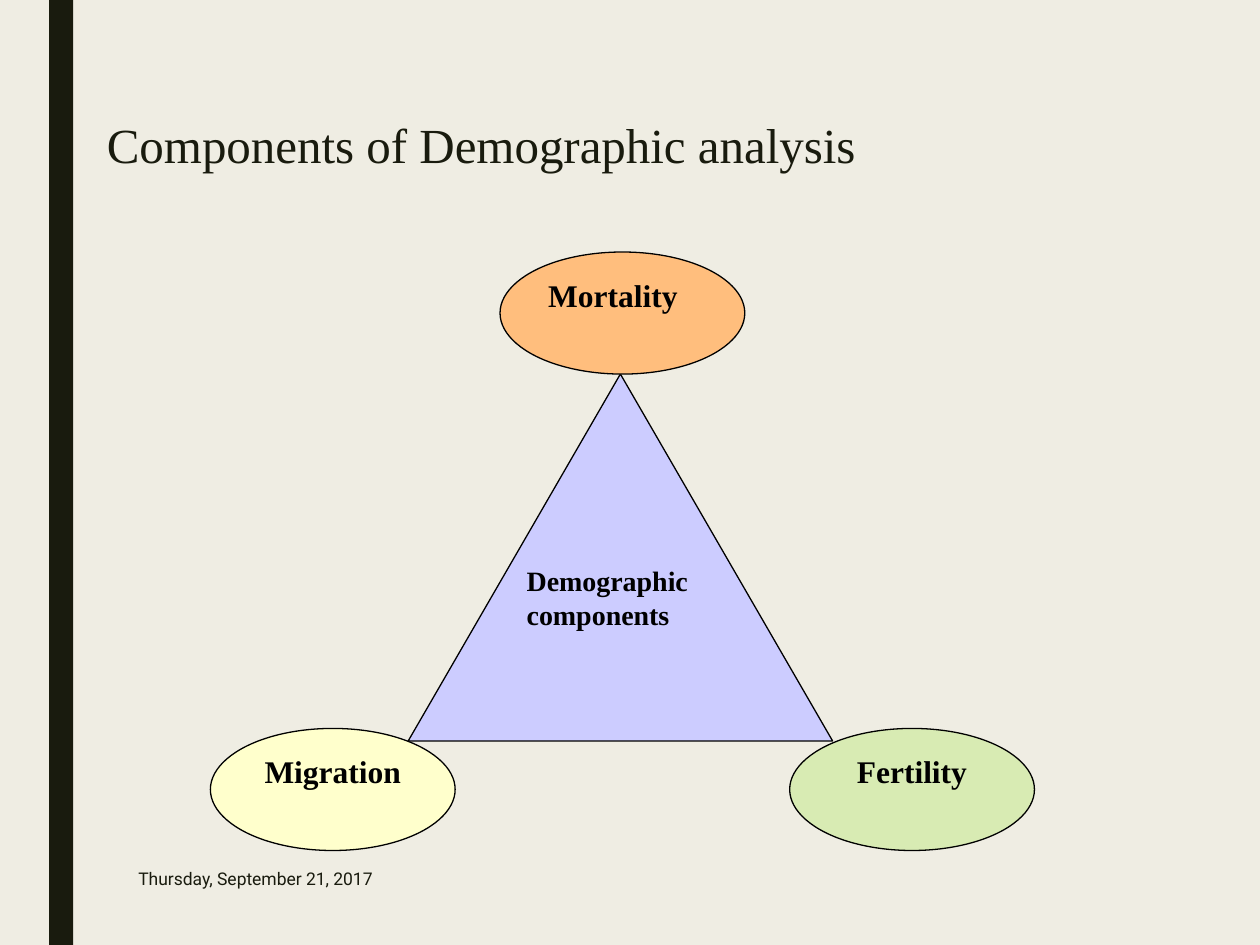
from pptx import Presentation
from pptx.dml.color import RGBColor
from pptx.enum.shapes import MSO_SHAPE as Kind
from pptx.enum.text import MSO_ANCHOR as Anchor, PP_ALIGN as Align
from pptx.util import Inches, Pt

WIDE, HIGH = 10, 7.5
SERIF = "Times New Roman"
DARK, BLACK = "191B0E", "000000"


def color(code):
    return RGBColor.from_string(code)


def place(box):
    return [Inches(side) for side in box]


def write(shape, text, size, font, code, bold=False, align=Align.LEFT,
          anchor=Anchor.TOP):
    frame = shape.text_frame
    frame.word_wrap = True
    frame.vertical_anchor = anchor
    para = frame.paragraphs[0]
    para.text = text
    para.alignment = align
    para.font.size = Pt(size)
    para.font.name = font
    para.font.bold = bold
    para.font.color.rgb = color(code)
    return para


def draw(slide, kind, box, fill, line=None):
    shape = slide.shapes.add_shape(kind, *place(box))
    shape.shadow.inherit = False
    shape.fill.solid()
    shape.fill.fore_color.rgb = color(fill)
    if line:
        shape.line.color.rgb = color(line)
        shape.line.width = Pt(0.75)
    else:
        shape.line.fill.background()
    return shape


def frame_page(slide, box):
    """Background, side bar and date."""
    left, top, width, height = box
    slide.background.fill.solid()
    slide.background.fill.fore_color.rgb = color("EFEDE3")
    bar = left + 0.039 * width, top, 0.019 * width, height
    draw(slide, Kind.RECTANGLE, bar, DARK)
    date = left + 0.1 * width, top + 0.9 * height, 0.29 * width, 0.06 * height
    write(slide.shapes.add_textbox(*place(date)), "Thursday, September 21, 2017",
          10, "Roboto", DARK, anchor=Anchor.MIDDLE)


def add_title(slide, box):
    para = write(slide.shapes.add_textbox(*place(box)),
                 "Components of Demographic analysis", 28, SERIF, DARK)
    para.line_spacing = 0.89


def add_diagram(slide, box):
    """Triangle with an oval at each corner."""
    left, top, width, height = box
    oval_w, oval_h = 0.297 * width, 0.204 * height
    step = (width - oval_w) / 2
    base = top + height - oval_h
    core = left + 0.24 * width, top + oval_h, 0.515 * width, 0.613 * height
    shape = draw(slide, Kind.ISOSCELES_TRIANGLE, core, "CCCCFF", BLACK)
    write(shape, "Demographic components", 16, SERIF, BLACK, True)

    ovals = [
        ("Migration", 0, base, "FFFFCC", Align.CENTER),
        ("Mortality", 1, top, "FFBE7D", Align.LEFT),
        ("Fertility", 2, base, "D8EBB3", Align.CENTER),
    ]
    for text, col, y, fill, align in ovals:
        spot = left + col * step, y, oval_w, oval_h
        shape = draw(slide, Kind.OVAL, spot, fill, BLACK)
        write(shape, text, 18, SERIF, BLACK, True, align)


def main():
    deck = Presentation()
    deck.slide_width, deck.slide_height = Inches(WIDE), Inches(HIGH)
    slide = deck.slides.add_slide(deck.slide_layouts[6])
    frame_page(slide, (0, 0, WIDE, HIGH))
    add_title(slide, (0.75, 0.92, 8.58, 0.95))
    add_diagram(slide, (1.67, 2, 6.54, 4.75))
    deck.save("out.pptx")


if __name__ == "__main__":
    main()
